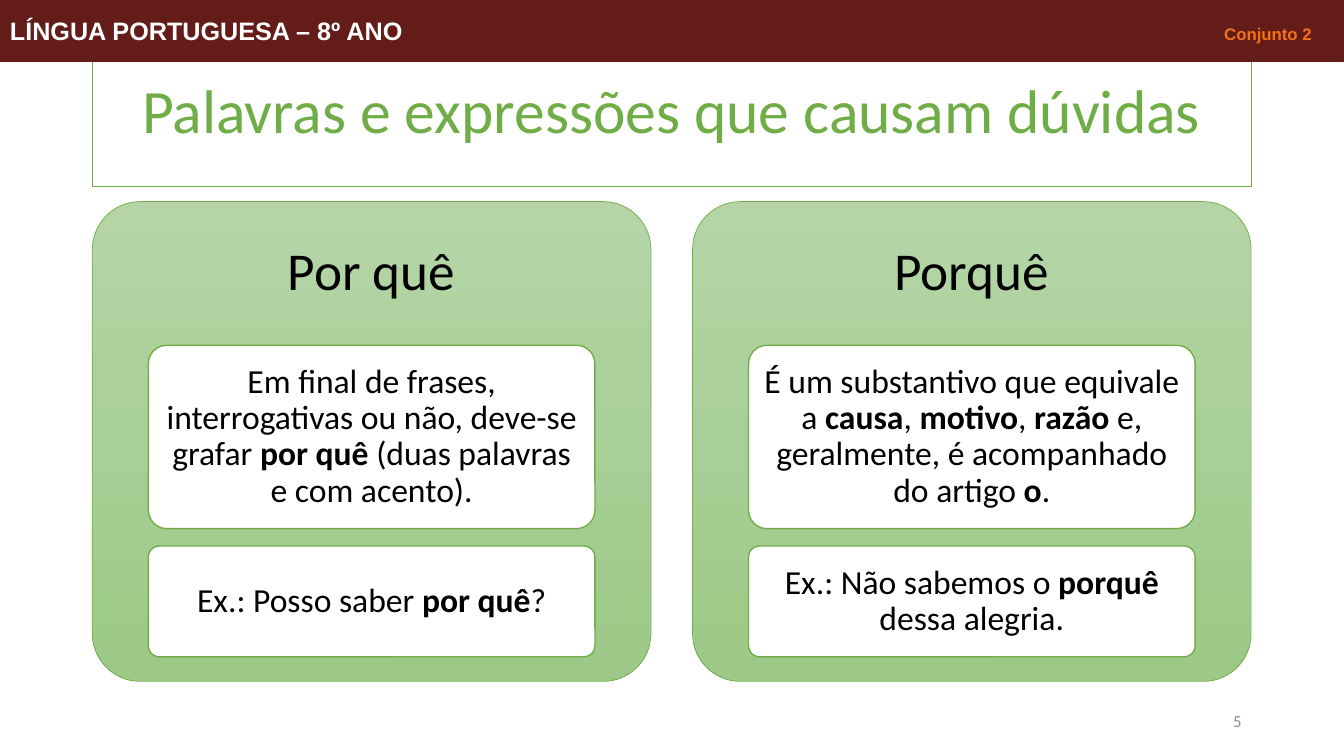
from lxml import etree
from pptx import Presentation
from pptx.dml.color import RGBColor
from pptx.enum import shapes, text
from pptx.oxml import ns
from pptx.util import Pt

COLORS = {
    "green": "70AD47", "card top": "B5D5A7", "card bottom": "9CC987",
    "maroon": "631C18", "orange": "F47116", "white": "FFFFFF",
    "black": "000000", "gray": "8C8C8C",
}
rgb = {name: RGBColor.from_string(value) for name, value in COLORS.items()}


def add_panel(kind, left, top, width, height, fill, line, weight):
    """Add an outlined shape; fill is a colour name, or None for the card gradient."""
    panel = slide.shapes.add_shape(kind, Pt(left), Pt(top), Pt(width), Pt(height))
    panel.shadow.inherit = False
    if kind == shapes.MSO_SHAPE.ROUNDED_RECTANGLE:
        panel.adjustments[0] = 0.1
    if fill:
        panel.fill.solid()
        panel.fill.fore_color.rgb = rgb[fill]
    else:
        panel.fill.gradient()
        panel.fill.gradient_angle = 270
        for stop, name in zip(panel.fill.gradient_stops, ("card top", "card bottom")):
            stop.color.rgb = rgb[name]
    panel.line.color.rgb = rgb[line]
    panel.line.width = Pt(weight)
    return panel


def write(holder, runs, align, spacing=0.9, inset=(7.2, 3.6)):
    """Write one paragraph from (wording, size, colour, bold, font) runs."""
    frame = holder.text_frame
    frame.word_wrap = True
    frame.auto_size = text.MSO_AUTO_SIZE.NONE
    frame.vertical_anchor = text.MSO_ANCHOR.MIDDLE
    frame.margin_left = frame.margin_right = Pt(inset[0])
    frame.margin_top = frame.margin_bottom = Pt(inset[1])
    paragraph = frame.paragraphs[0]
    paragraph.alignment = align
    paragraph.line_spacing = spacing
    for wording, size, color, bold, font in runs:
        run = paragraph.add_run()
        run.text = wording
        run.font.size = Pt(size)
        run.font.color.rgb = rgb[color]
        run.font.bold = bold
        run.font.name = font
    return paragraph


CENTER, LEFT, RIGHT = text.PP_ALIGN.CENTER, text.PP_ALIGN.LEFT, text.PP_ALIGN.RIGHT
ROUNDED = shapes.MSO_SHAPE.ROUNDED_RECTANGLE
MARGIN, CARD_TOP, CARD_WIDTH, CARD_PITCH = 66, 144, 399, 428.7

deck = Presentation()
deck.slide_width, deck.slide_height = Pt(960), Pt(540)
slide = deck.slides.add_slide(deck.slide_layouts[5])

title = slide.shapes.title
title.left, title.top, title.width, title.height = Pt(MARGIN), Pt(28.8), Pt(828), Pt(104.4)
title.fill.solid()
title.fill.fore_color.rgb = rgb["white"]
title.line.color.rgb = rgb["green"]
title.line.width = Pt(1)
write(title, [("Palavras e expressões que causam dúvidas", 44, "green", False, "Calibri")], CENTER)

# Each card: heading, rule and example; the odd pieces of a wording are bold
cards = [
    ("Por quê",
     ["Em final de frases, interrogativas ou não, deve-se grafar ", "por quê ",
      "(duas palavras e com acento)."],
     ["Ex.: Posso saber ", "por quê", "?"]),
    ("Porquê",
     ["É um substantivo que equivale a ", "causa", ", ", "motivo", ", ", "razão",
      " e, geralmente, é acompanhado do artigo ", "o", "."],
     ["Ex.: Não sabemos o ", "porquê", " dessa alegria."]),
]
for column, (heading, rule, example) in enumerate(cards):
    left = MARGIN + column * CARD_PITCH
    add_panel(ROUNDED, left, CARD_TOP, CARD_WIDTH, 342.7, None, "green", 0.5)
    heading_box = slide.shapes.add_textbox(Pt(left), Pt(CARD_TOP), Pt(CARD_WIDTH), Pt(103))
    write(heading_box, [(heading, 38, "black", False, "Calibri")], CENTER, inset=(11.5, 11.5))
    for pieces, top, height in ((rule, 246.6, 131), (example, 390, 79.2)):
        panel = add_panel(ROUNDED, left + 40, top, 319, height, "white", "green", 1)
        runs = [(piece, 24, "black", i % 2 == 1, "Calibri") for i, piece in enumerate(pieces)]
        write(panel, runs, CENTER, inset=(5, 3.6))

page_number = slide.shapes.add_textbox(Pt(678), Pt(500.5), Pt(216), Pt(28.8))
write(page_number, [("5", 12, "gray", False, "Calibri")], RIGHT, 1)

header = add_panel(shapes.MSO_SHAPE.RECTANGLE, 0, 0, 960, 44, "maroon", "maroon", 0.75)
header_line = write(header, [
    ("LÍNGUA PORTUGUESA – 8º ANO\t", 18, "white", True, "Arial"),
    ("Conjunto 2", 12, "orange", True, "Arial"),
], LEFT, 1)
# A right tab stop sets the second label against the right side
tabs = etree.SubElement(header_line._p.get_or_add_pPr(), ns.qn("a:tabLst"))
etree.SubElement(tabs, ns.qn("a:tab"), pos=str(Pt(930)), algn="r")

deck.save("out.pptx")
